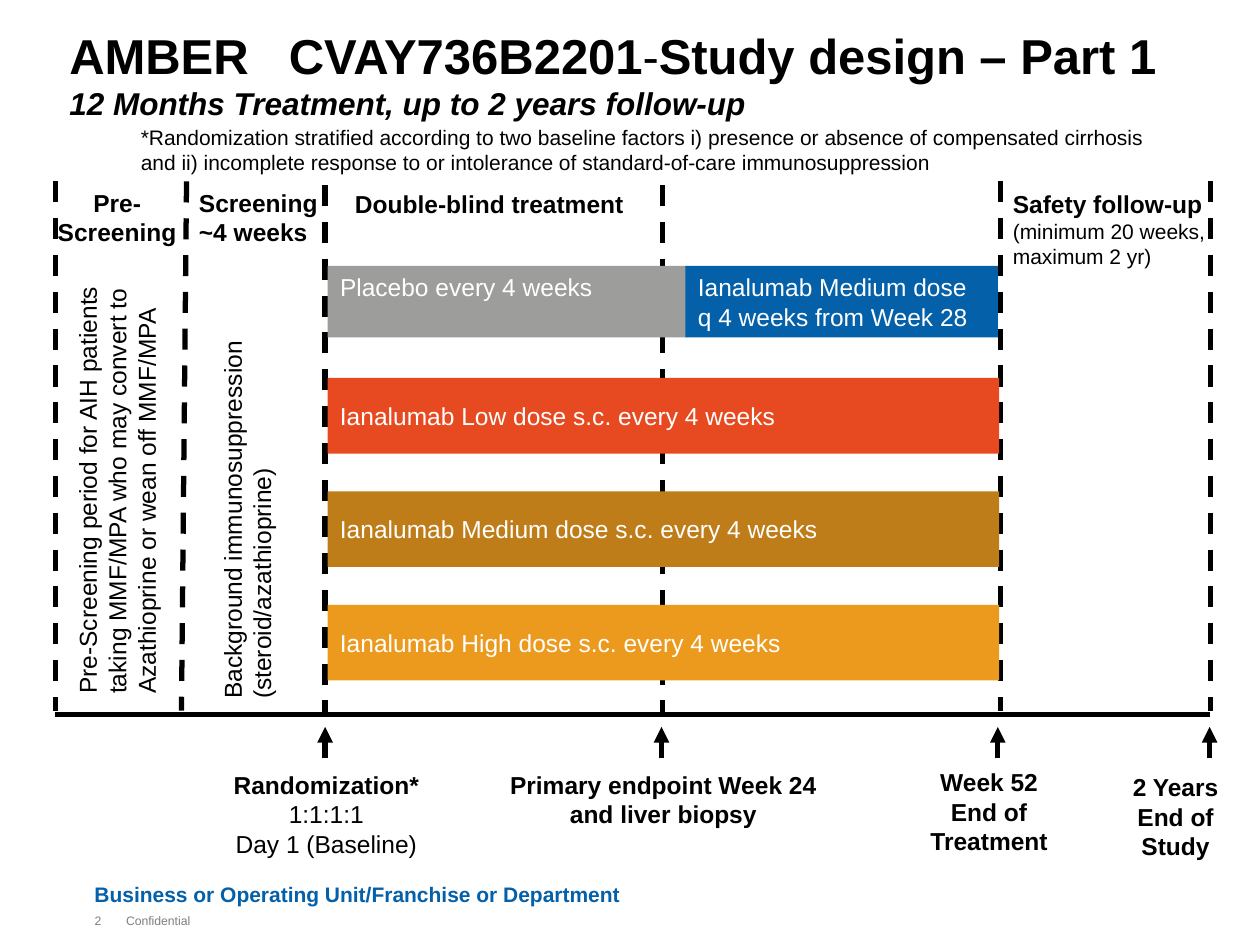
from lxml import etree
from pptx import Presentation
from pptx.dml import color
from pptx.enum import dml, shapes, text
from pptx.oxml import ns
from pptx.util import Pt

LEFT, CENTER = text.PP_ALIGN.LEFT, text.PP_ALIGN.CENTER
TOP, MIDDLE, BOTTOM = text.MSO_ANCHOR.TOP, text.MSO_ANCHOR.MIDDLE, text.MSO_ANCHOR.BOTTOM


def style(font, size, hex_color, bold=False, italic=False):
    font.name, font.size, font.bold, font.italic = "Arial", Pt(size), bold, italic
    font.color.rgb = color.RGBColor.from_string(hex_color)


def add_line(x1, y1, x2, y2, dashed=False, arrow=False):
    connector = slide.shapes.add_connector(
        shapes.MSO_CONNECTOR.STRAIGHT, Pt(x1), Pt(y1), Pt(x2), Pt(y2))
    connector.line.width = Pt(3)
    connector.line.color.rgb = color.RGBColor.from_string("000000")
    if dashed:
        connector.line.dash_style = dml.MSO_LINE.DASH
    if arrow:
        outline = connector.line._get_or_add_ln()
        etree.SubElement(outline, ns.qn("a:tailEnd"), type="triangle")
    etree.SubElement(connector._element.spPr, ns.qn("a:effectLst"))


presentation = Presentation()
presentation.slide_width, presentation.slide_height = Pt(720), Pt(540)
slide = presentation.slides.add_slide(presentation.slide_layouts[5])

title = slide.shapes.title
title.left, title.top, title.width, title.height = Pt(32.4), Pt(10.8), Pt(687), Pt(63.4)
frame = title.text_frame
frame.auto_size = text.MSO_AUTO_SIZE.NONE
frame.vertical_anchor = TOP
frame.text = "\n12 Months Treatment, up to 2 years follow-up"
heading, subtitle = frame.paragraphs
heading.alignment = subtitle.alignment = LEFT
tabs = etree.SubElement(heading._p.get_or_add_pPr(), ns.qn("a:tabLst"))
etree.SubElement(tabs, ns.qn("a:tab"), pos=str(Pt(125.5)), algn="l")
for words, bold in [("AMBER\tCVAY736B2201", True), ("-", False),
                    ("Study design – Part 1", True)]:
    run = heading.add_run()
    run.text = words
    style(run.font, 28, "000000", bold)
style(subtitle.runs[0].font, 18, "000000", True, True)

axis_y = 408.5
add_line(31.7, axis_y, 691.2, axis_y)
for top_x, bottom_x, top in [(31.7, 31.7, 103.7), (106.6, 103.7, 103.7), (185.8, 185.8, 105.8),
                             (378.7, 378.7, 105.8), (571.7, 571.7, 103.7),
                             (691.9, 691.9, 103.7)]:
    add_line(top_x, top, bottom_x, top + 302.4, dashed=True)
for x in (185.8, 378, 570.2, 691.2):
    add_line(x, 433.4, x, 415.4, arrow=True)

arms = [
    ("Placebo every 4 weeks", 187.2, 151.9, 205.2, 41, "9D9D9C", TOP),
    ("Ianalumab Medium dose q 4 weeks from Week 28", 391.7, 151.9, 178.6, 41, "0460A9", MIDDLE),
]
for row, (dose, fill) in enumerate([("Low", "E74A21"), ("Medium", "BF7D1A"), ("High", "EC9A1E")]):
    arms.append((f"Ianalumab {dose} dose s.c. every 4 weeks",
                 187.2, 216 + 64.8 * row, 383.8, 43.2, fill, MIDDLE))
for words, left, top, width, height, fill, anchor in arms:
    bar = slide.shapes.add_shape(
        shapes.MSO_SHAPE.RECTANGLE, Pt(left), Pt(top), Pt(width), Pt(height))
    bar.shadow.inherit = False
    bar.fill.solid()
    bar.fill.fore_color.rgb = color.RGBColor.from_string(fill)
    bar.line.fill.background()
    bar.text_frame.word_wrap = True
    bar.text_frame.vertical_anchor = anchor
    bar.text_frame.text = words
    paragraph = bar.text_frame.paragraphs[0]
    paragraph.alignment = LEFT
    style(paragraph.runs[0].font, 14, "FFFFFF")

note = ("*Randomization stratified according to two baseline factors i) presence or absence of "
        "compensated cirrhosis and ii) incomplete response to or intolerance of "
        "standard-of-care immunosuppression")
pre_screening = ("Pre-Screening period for AIH patients taking MMF/MPA who may convert to "
                 "Azathioprine or wean off MMF/MPA")
bold_14, plain_14, plain_12 = (14, True), (14, False), (12, False)
labels = [
    (note, 73.4, 67.7, 607, 36, LEFT, 0, [plain_12]),
    ("Pre-Screening", 21.6, 103.7, 90.7, 41, CENTER, 0, [bold_14]),
    ("Screening\n~4 weeks", 106.6, 103.7, 90.7, 41, LEFT, 0, [bold_14] * 2),
    ("Double-blind treatment", 195.8, 104.4, 182.2, 24.5, LEFT, 0, [bold_14]),
    ("Safety follow-up\n(minimum 20 weeks, maximum 2 yr)",
     571.7, 104.4, 126.7, 53.3, LEFT, 0, [bold_14, plain_12]),
    (pre_screening, -69.8, 237.6, 273.6, 58.3, LEFT, 270, [plain_14]),
    ("Background immunosuppression\n(steroid/azathioprine)",
     27.4, 272.2, 227.5, 41, LEFT, 270, [plain_14] * 2),
    ("Randomization*\n1:1:1:1\nDay 1 (Baseline)",
     118.8, 436.3, 135.4, 58.3, CENTER, 0, [bold_14, plain_14, plain_14]),
    ("Primary endpoint Week 24\nand liver biopsy",
     277.2, 436.3, 203.8, 41, CENTER, 0, [bold_14] * 2),
    ("Week 52\nEnd of\nTreatment", 506.9, 434.9, 116.6, 58.3, CENTER, 0, [bold_14] * 3),
    ("2 Years\nEnd of\nStudy", 621.4, 437.8, 100.8, 58.3, CENTER, 0, [bold_14] * 3),
]
for words, left, top, width, height, alignment, rotation, formats in labels:
    label = slide.shapes.add_textbox(Pt(left), Pt(top), Pt(width), Pt(height))
    label.rotation = rotation
    label.text_frame.word_wrap = True
    label.text_frame.text = words
    for paragraph, (size, bold) in zip(label.text_frame.paragraphs, formats):
        paragraph.alignment = alignment
        style(paragraph.runs[0].font, size, "000000", bold)

for words, left, top, width, size, hex_color, bold, anchor in [
        ("Business or Operating Unit/Franchise or Department",
         54, 500.4, 468, 12, "0460A9", True, BOTTOM),
        ("2", 54, 522, 18, 7, "7F7F7F", False, TOP),
        ("Confidential", 72, 522, 450, 7, "7F7F7F", False, TOP)]:
    footer = slide.shapes.add_textbox(Pt(left), Pt(top), Pt(width), Pt(18))
    frame = footer.text_frame
    frame.margin_left = frame.margin_top = frame.margin_right = frame.margin_bottom = 0
    frame.word_wrap = True
    frame.vertical_anchor = anchor
    frame.text = words
    style(frame.paragraphs[0].runs[0].font, size, hex_color, bold)

presentation.save("out.pptx")
